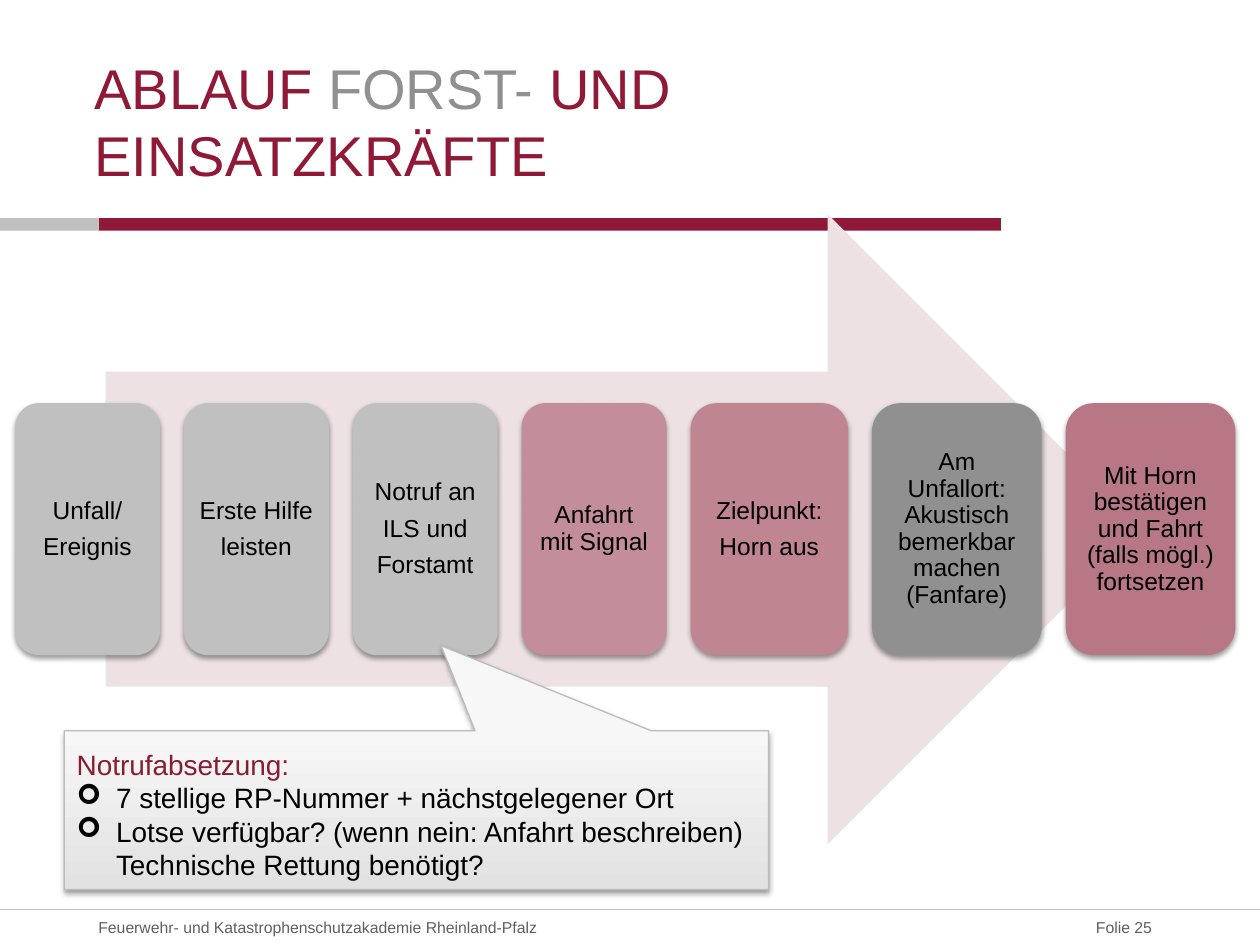
from dataclasses import dataclass

from lxml.etree import SubElement
from pptx import Presentation
from pptx.dml.color import RGBColor
from pptx.enum.shapes import MSO_CONNECTOR, MSO_SHAPE
from pptx.enum.text import MSO_ANCHOR, PP_ALIGN
from pptx.oxml.ns import qn
from pptx.util import Pt

COLORS = {
    "burgundy": "8F1936",
    "heading": "871D33",
    "silver": "C0C0C0",
    "gray": "909090",
    "footer": "606060",
    "arrow": "EDE1E3",
    "rose_light": "C38E99",
    "rose": "BF8692",
    "rose_dark": "B77785",
    "callout_dark": "E2E2E2",
    "callout_light": "F7F7F7",
    "callout_edge": "BCBCBC",
    "black": "000000",
}
FONT = "Arial"
STEP_LEFT, STEP_TOP, STEP_HEIGHT, STEP_GAP = 8.6, 230.4, 144, 13.7


@dataclass
class Step:
    lines: list[str]
    color: str
    width: float = 82.8


STEPS = [
    Step(["Unfall/", "Ereignis"], "silver"),
    Step(["Erste Hilfe", "leisten"], "silver"),
    Step(["Notruf an", "ILS und", "Forstamt"], "silver"),
    Step(["Anfahrt mit Signal"], "rose_light"),
    Step(["Zielpunkt:", "Horn aus"], "rose", 90),
    Step(["Am Unfallort: Akustisch bemerkbar machen (Fanfare)"], "gray", 97),
    Step(["Mit Horn bestätigen und Fahrt (falls mögl.) fortsetzen"], "rose_dark", 97),
]
CALL_DETAILS = [
    "7 stellige RP-Nummer + nächstgelegener Ort",
    "Lotse verfügbar? (wenn nein: Anfahrt beschreiben) Technische Rettung benötigt?",
]


def rgb(color: str) -> RGBColor:
    return RGBColor.from_string(COLORS[color])


def style_font(font, size: float, color: str) -> None:
    font.name, font.size = FONT, Pt(size)
    font.color.rgb = rgb(color)


def add_block(slide, kind, left: float, top: float, width: float, height: float, color: str):
    block = slide.shapes.add_shape(kind, Pt(left), Pt(top), Pt(width), Pt(height))
    block.shadow.inherit = False
    block.fill.solid()
    block.fill.fore_color.rgb = rgb(color)
    block.line.fill.background()
    return block


def add_soft_shadow(block) -> None:
    effects = block.element.spPr.find(qn("a:effectLst"))
    shadow = SubElement(effects, qn("a:outerShdw"), blurRad=str(Pt(3.1)),
                        dist=str(Pt(1.6)), dir="5400000", rotWithShape="0")
    tint = SubElement(shadow, qn("a:srgbClr"), val=COLORS["black"])
    SubElement(tint, qn("a:alpha"), val="38000")


def set_frame(frame, anchor, left: float = 0, top: float = 0, right: float = 0, bottom: float = 0) -> None:
    frame.word_wrap = True
    frame.vertical_anchor = anchor
    frame.margin_left, frame.margin_top = Pt(left), Pt(top)
    frame.margin_right, frame.margin_bottom = Pt(right), Pt(bottom)


def add_text(slide, left: float, top: float, width: float, height: float, anchor, right: float = 0):
    frame = slide.shapes.add_textbox(Pt(left), Pt(top), Pt(width), Pt(height)).text_frame
    set_frame(frame, anchor, right=right)
    return frame.paragraphs[0]


def add_step(slide, step: Step, left: float) -> None:
    card = add_block(slide, MSO_SHAPE.ROUNDED_RECTANGLE, left, STEP_TOP, step.width, STEP_HEIGHT, step.color)
    add_soft_shadow(card)
    frame = card.text_frame
    set_frame(frame, MSO_ANCHOR.MIDDLE, 4.3, 4.3, 4.3, 4.3)
    frame.text = "\n".join(step.lines)
    for paragraph in frame.paragraphs:
        paragraph.alignment = PP_ALIGN.CENTER
        paragraph.line_spacing = 0.9
        paragraph.space_after = Pt(5.5)
        style_font(paragraph.font, 14, "black")


def add_callout(slide) -> None:
    callout = add_block(slide, MSO_SHAPE.RECTANGULAR_CALLOUT, 36.7, 417.6, 402.5, 90.7, "callout_light")
    callout.adjustments[0], callout.adjustments[1] = 0.035, -1.036
    callout.fill.gradient()
    callout.fill.gradient_angle = 90
    for stop, color in zip(callout.fill.gradient_stops, ("callout_dark", "callout_light")):
        stop.color.rgb = rgb(color)
    callout.line.color.rgb = rgb("callout_edge")
    callout.line.width = Pt(0.75)
    add_soft_shadow(callout)

    frame = callout.text_frame
    set_frame(frame, MSO_ANCHOR.TOP, left=7.2, top=9.4, right=12)
    heading = frame.paragraphs[0]
    heading.text = "Notrufabsetzung:"
    heading.alignment = PP_ALIGN.LEFT
    style_font(heading.font, 16, "heading")
    for detail in CALL_DETAILS:
        item = frame.add_paragraph()
        item.text = detail
        item.alignment = PP_ALIGN.LEFT
        properties = item._p.get_or_add_pPr()
        properties.set("marL", str(Pt(22.5)))
        properties.set("indent", str(Pt(-22.5)))
        SubElement(properties, qn("a:buFont"), typeface="Wingdings")
        SubElement(properties, qn("a:buChar"), char="➢")
        style_font(item.font, 16, "black")


def add_footer(slide) -> None:
    rule = slide.shapes.add_connector(MSO_CONNECTOR.STRAIGHT, Pt(0), Pt(519.8), Pt(720), Pt(519.8))
    rule.line.color.rgb = rgb("silver")
    rule.line.width = Pt(0.75)
    SubElement(rule.element.spPr, qn("a:effectLst"))
    page = add_text(slide, 571.7, 519.8, 91.4, 20.2, MSO_ANCHOR.MIDDLE, right=4.8)
    page.text = "Folie 25"
    page.alignment = PP_ALIGN.RIGHT
    academy = add_text(slide, 56.2, 519.8, 396.7, 20.2, MSO_ANCHOR.MIDDLE)
    academy.text = "Feuerwehr- und Katastrophenschutzakademie Rheinland-Pfalz"
    for paragraph in (page, academy):
        style_font(paragraph.font, 9, "footer")


def add_title(slide) -> None:
    title = add_text(slide, 54, 34.6, 460, 72.7, MSO_ANCHOR.BOTTOM)
    for words, color in (("ABLAUF ", "burgundy"), ("FORST-", "gray"), (" UND EINSATZKRÄFTE", "burgundy")):
        run = title.add_run()
        run.text = words
        style_font(run.font, 32, color)


def main() -> None:
    """Build the slide on the procedure for forestry and emergency crews."""
    presentation = Presentation()
    presentation.slide_width, presentation.slide_height = Pt(720), Pt(540)
    slide = presentation.slides.add_slide(presentation.slide_layouts[6])
    add_block(slide, MSO_SHAPE.RECTANGLE, 56.5, 124.6, 515.5, 7.2, "burgundy")
    add_block(slide, MSO_SHAPE.RECTANGLE, 0, 124.6, 56.5, 7.2, "silver")
    add_footer(slide)
    add_block(slide, MSO_SHAPE.RIGHT_ARROW, 60.4, 122.4, 592.6, 360, "arrow")
    left = STEP_LEFT
    for step in STEPS:
        add_step(slide, step, left)
        left += step.width + STEP_GAP
    add_callout(slide)
    add_title(slide)
    presentation.save("out.pptx")


if __name__ == "__main__":
    main()
